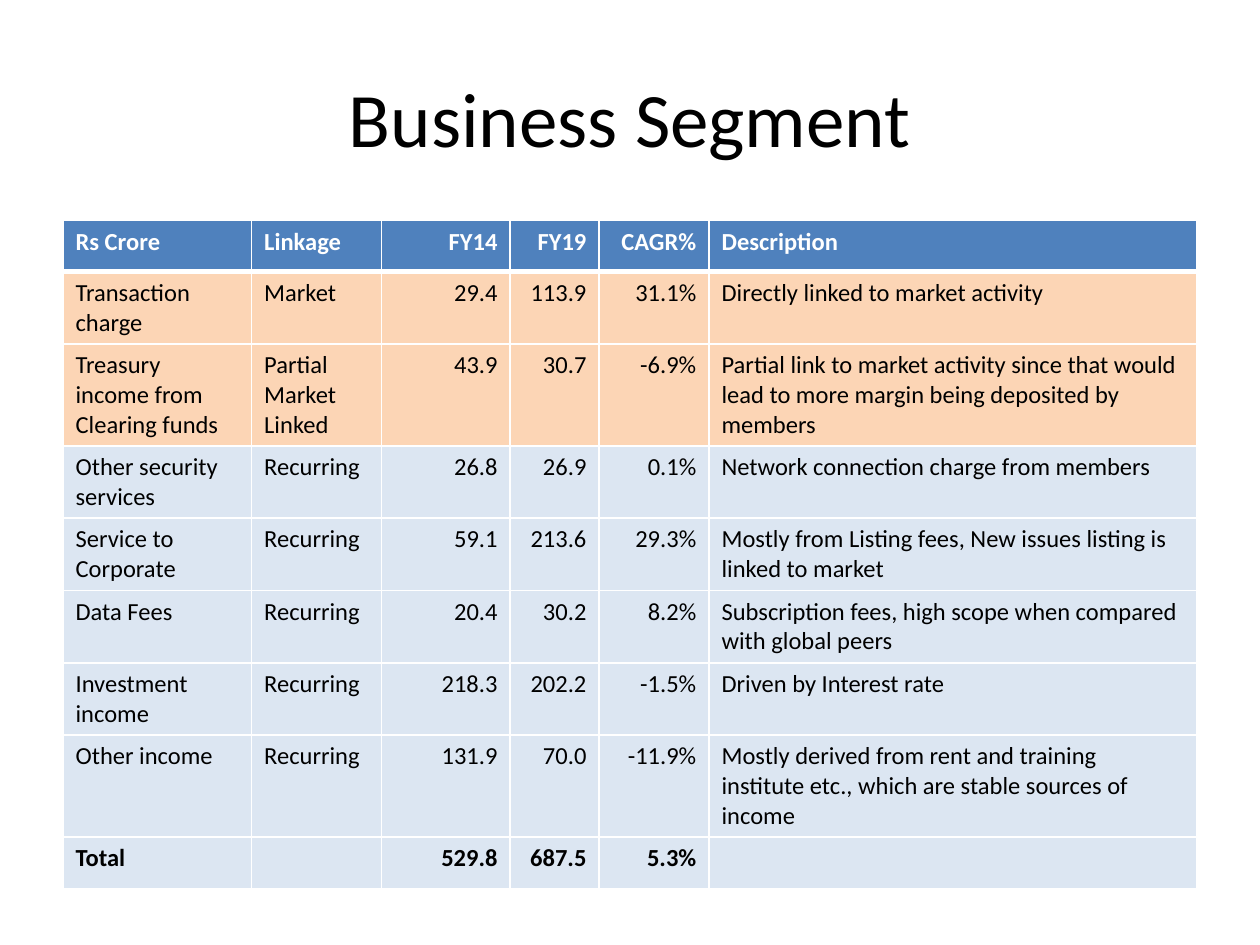
from dataclasses import dataclass

from lxml.etree import SubElement
from pptx import Presentation
from pptx.dml.color import RGBColor
from pptx.enum.text import MSO_ANCHOR, PP_ALIGN
from pptx.oxml.ns import qn
from pptx.slide import Slide
from pptx.table import Table, _Cell
from pptx.util import Pt

COLORS = {
    "header": "4F81BD",
    "market": "FCD5B5",
    "recurring": "DCE6F2",
    "border": "FFFFFF",
    "header_text": "FFFFFF",
    "text": "000000",
}
FONT = "Calibri"
COLUMN_WIDTHS = (107.8, 74.1, 73.7, 50.8, 62.8, 278.8)
NUMBER_COLUMNS = (2, 3, 4)
ROW_HEIGHT = 29.2


@dataclass(frozen=True)
class SegmentRow:
    values: tuple[str, ...]
    fill: str = "recurring"
    text_color: str = "text"
    bold: bool = False
    bottom_border: float = 1


ROWS = (
    SegmentRow(("Rs Crore", "Linkage", "FY14", "FY19", "CAGR%", "Description"),
               "header", "header_text", True, 3),
    SegmentRow(("Transaction charge", "Market", "29.4", "113.9", "31.1%",
                "Directly linked to market activity"), "market"),
    SegmentRow(("Treasury income from Clearing funds", "Partial Market Linked",
                "43.9", "30.7", "-6.9%",
                "Partial link to market activity since that would lead to "
                "more margin being deposited by members"), "market"),
    SegmentRow(("Other security services", "Recurring", "26.8", "26.9", "0.1%",
                "Network connection charge from members")),
    SegmentRow(("Service to Corporate", "Recurring", "59.1", "213.6", "29.3%",
                "Mostly from Listing fees, New issues listing is linked to market")),
    SegmentRow(("Data Fees", "Recurring", "20.4", "30.2", "8.2%",
                "Subscription fees, high scope when compared with global peers")),
    SegmentRow(("Investment income", "Recurring", "218.3", "202.2", "-1.5%",
                "Driven by Interest rate")),
    SegmentRow(("Other income", "Recurring", "131.9", "70.0", "-11.9%",
                "Mostly derived from rent and training institute etc., "
                "which are stable sources of income")),
    SegmentRow(("Total", "", "529.8", "687.5", "5.3%", ""), bold=True),
)


def rgb(name: str) -> RGBColor:
    return RGBColor.from_string(COLORS[name])


def add_title(slide: Slide, text: str) -> None:
    title = slide.shapes.title
    title.left, title.top, title.width, title.height = Pt(36), Pt(21.6), Pt(648), Pt(90)
    title.text_frame.text = text
    title.text_frame.vertical_anchor = MSO_ANCHOR.MIDDLE
    paragraph = title.text_frame.paragraphs[0]
    paragraph.alignment = PP_ALIGN.CENTER
    paragraph.font.name = FONT
    paragraph.font.size = Pt(44)
    paragraph.font.color.rgb = rgb("text")


def set_borders(cell: _Cell, top: float, bottom: float) -> None:
    properties = cell._tc.get_or_add_tcPr()
    for side, width in (("L", 1), ("R", 1), ("T", top), ("B", bottom)):
        line = SubElement(properties, qn(f"a:ln{side}"), w=str(Pt(width)))
        fill = SubElement(line, qn("a:solidFill"))
        SubElement(fill, qn("a:srgbClr"), val=COLORS["border"])


def fill_row(table: Table, index: int, row: SegmentRow) -> None:
    top_border = ROWS[index - 1].bottom_border if index else 1
    for column, value in enumerate(row.values):
        cell = table.cell(index, column)
        set_borders(cell, top_border, row.bottom_border)
        cell.fill.solid()
        cell.fill.fore_color.rgb = rgb(row.fill)
        cell.text = value
        paragraph = cell.text_frame.paragraphs[0]
        paragraph.alignment = PP_ALIGN.RIGHT if column in NUMBER_COLUMNS else PP_ALIGN.LEFT
        paragraph.font.name = FONT
        paragraph.font.size = Pt(14)
        paragraph.font.bold = row.bold
        paragraph.font.color.rgb = rgb(row.text_color)


def add_segment_table(slide: Slide) -> None:
    table = slide.shapes.add_table(
        len(ROWS), len(COLUMN_WIDTHS), Pt(36), Pt(126),
        Pt(sum(COLUMN_WIDTHS)), Pt(ROW_HEIGHT * len(ROWS))).table
    for column, width in zip(table.columns, COLUMN_WIDTHS):
        column.width = Pt(width)
    for index, row in enumerate(ROWS):
        table.rows[index].height = Pt(ROW_HEIGHT)
        fill_row(table, index, row)


def main() -> None:
    presentation = Presentation()
    presentation.slide_width, presentation.slide_height = Pt(720), Pt(540)
    slide = presentation.slides.add_slide(presentation.slide_layouts[5])
    add_title(slide, "Business Segment")
    add_segment_table(slide)
    presentation.save("out.pptx")


if __name__ == "__main__":
    main()
